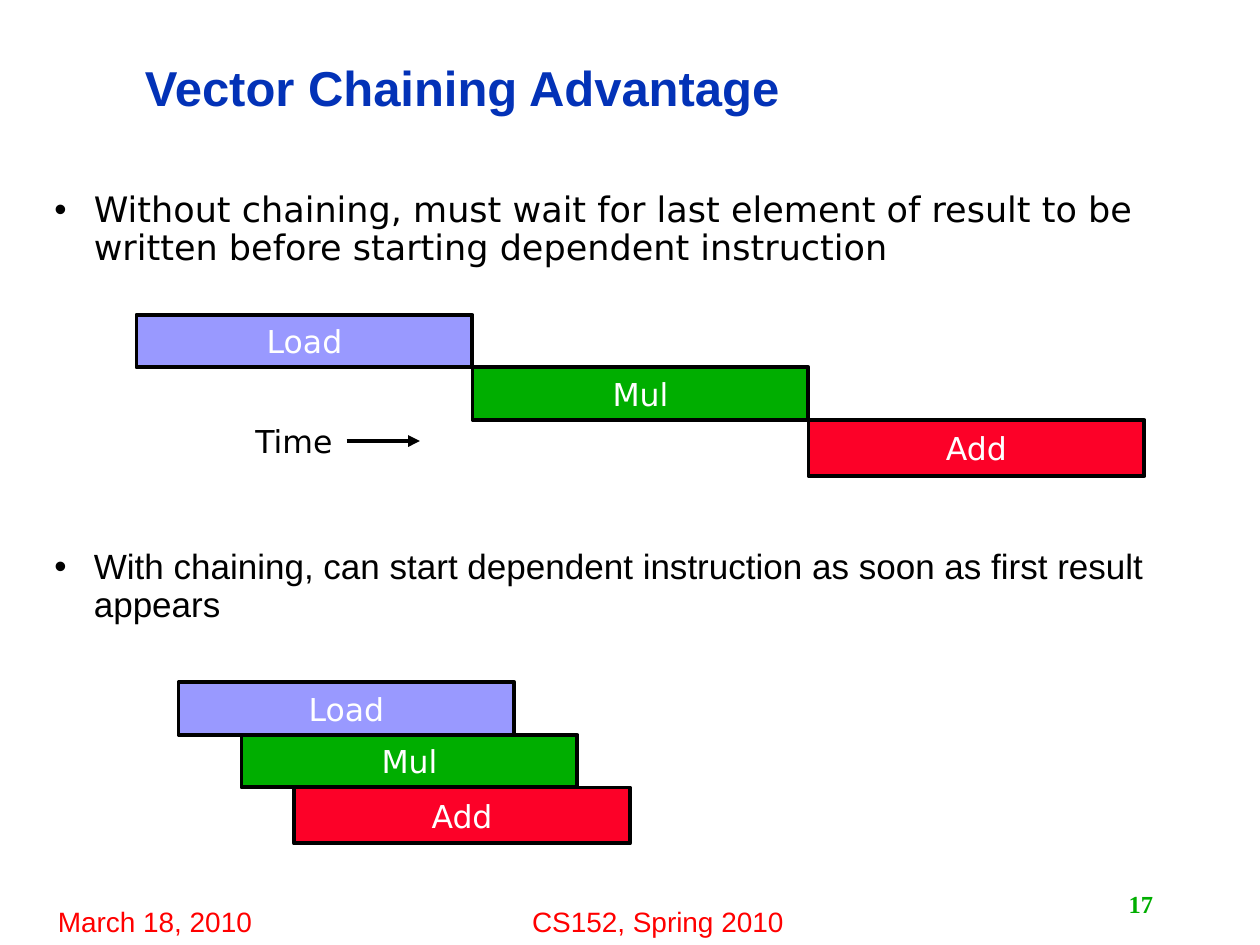
from dataclasses import dataclass

import lxml.etree
import pptx
import pptx.dml.color
import pptx.enum.shapes
import pptx.enum.text
import pptx.oxml.ns
import pptx.util

Pt = pptx.util.Pt
qn = pptx.oxml.ns.qn
ALIGN = pptx.enum.text.PP_ALIGN
MIDDLE = pptx.enum.text.MSO_ANCHOR.MIDDLE


@dataclass(frozen=True)
class Theme:
    title: str = "0332B7"
    ink: str = "000000"
    light: str = "FFFFFF"
    load: str = "9999FF"
    mul: str = "00AE00"
    add: str = "FC0128"
    footer: str = "FF0000"
    number: str = "00AE00"
    sans: str = "Arial"
    diagram: str = "DejaVu Sans"
    serif: str = "Times New Roman"
    title_size: int = 28
    bullet_size: int = 20
    label_size: int = 18
    footer_size: int = 16
    number_size: int = 14
    outline: float = 2.25


THEME = Theme()
STAGES = (("Load", THEME.load, 30), ("Mul", THEME.mul, 30), ("Add", THEME.add, 32))
STAGE_WIDTH = 192
STAGE_STEP = 30


def color(value):
    return pptx.dml.color.RGBColor.from_string(value)


def write(shape, text, face, size, ink, align=ALIGN.CENTER, bold=False, wrap=True, anchor=MIDDLE):
    """Fill the shape with one formatted paragraph and return that paragraph."""
    frame = shape.text_frame
    frame.word_wrap = wrap
    frame.vertical_anchor = anchor
    paragraph = frame.paragraphs[0]
    paragraph.text = text
    paragraph.alignment = align
    font = paragraph.font
    font.name, font.size, font.bold = face, Pt(size), bold
    font.color.rgb = color(ink)
    return paragraph


def text_box(shapes, box, text, *style, **options):
    label = shapes.add_textbox(*map(Pt, box))
    write(label, text, *style, **options)
    return label


def place_title(slide, box, text):
    title = slide.shapes.title
    title.left, title.top, title.width, title.height = map(Pt, box)
    heading = write(title, text, THEME.sans, THEME.title_size, THEME.title,
                    align=ALIGN.LEFT, bold=True)
    heading.line_spacing = 0.9


def bullet_text(shapes, box, text, face):
    statement = shapes.add_textbox(*map(Pt, box))
    paragraph = statement.text_frame.paragraphs[0]
    properties = paragraph._p.get_or_add_pPr()
    properties.set("marL", str(Pt(22.5)))
    properties.set("indent", str(Pt(-22.5)))
    lxml.etree.SubElement(properties, qn("a:buFont")).set("typeface", THEME.sans)
    lxml.etree.SubElement(properties, qn("a:buChar")).set("char", "•")
    write(statement, text, face, THEME.bullet_size, THEME.ink, align=ALIGN.LEFT)
    paragraph.line_spacing = 0.9


def stage_bars(shapes, top, lefts):
    for row, (left, (name, fill, height)) in enumerate(zip(lefts, STAGES)):
        bar = shapes.add_shape(
            pptx.enum.shapes.MSO_SHAPE.RECTANGLE,
            Pt(left), Pt(top + row * STAGE_STEP), Pt(STAGE_WIDTH), Pt(height))
        bar.shadow.inherit = False
        bar.fill.solid()
        bar.fill.fore_color.rgb = color(fill)
        bar.line.color.rgb = color(THEME.ink)
        bar.line.width = Pt(THEME.outline)
        write(bar, name, THEME.diagram, THEME.label_size, THEME.light)


def time_arrow(shapes, box, length):
    left, top, width, height = box
    time = text_box(shapes, box, "Time", THEME.diagram, THEME.label_size, THEME.ink, wrap=False)
    start, middle = left + width, top + height / 2
    arrow = shapes.add_connector(pptx.enum.shapes.MSO_CONNECTOR.STRAIGHT,
                                 Pt(start), Pt(middle), Pt(start + length), Pt(middle))
    arrow.begin_connect(time, 3)
    arrow.line.color.rgb = color(THEME.ink)
    arrow.line.width = Pt(THEME.outline)
    lxml.etree.SubElement(arrow.line._get_or_add_ln(), qn("a:tailEnd")).set("type", "triangle")
    lxml.etree.SubElement(arrow._element.spPr, qn("a:effectLst"))


def comparison(slide, box, text, face, lefts):
    """Place a statement at the top of the box and its timeline below it."""
    left, top, width, bars_drop = box
    shapes = slide.shapes.add_group_shape().shapes
    bullet_text(shapes, (left, top, width, 50.4), text, face)
    stage_bars(shapes, top + bars_drop, lefts)
    return shapes


def footer(slide, top):
    style = (THEME.sans, THEME.footer_size, THEME.footer)
    for left, width, text in ((25.2, 126.7, "March 18, 2010"),
                              (286.6, 178.6, "CS152, Spring 2010")):
        text_box(slide.shapes, (left, top, width, 26.6), text, *style,
                 wrap=False, anchor=pptx.enum.text.MSO_ANCHOR.TOP)
    text_box(slide.shapes, (516.2, top - 8.7, 149.8, 23), "17",
             THEME.serif, THEME.number_size, THEME.number,
             align=ALIGN.RIGHT, bold=True, wrap=False)


def main():
    deck = pptx.Presentation()
    deck.slide_width, deck.slide_height = Pt(720), Pt(540)
    slide = deck.slides.add_slide(deck.slide_layouts[5])

    place_title(slide, (75.6, 23.8, 561.6, 55.4), "Vector Chaining Advantage")
    unchained = comparison(
        slide, (24, 106.5, 672, 73.5),
        "Without chaining, must wait for last element of result to be written "
        "before starting dependent instruction",
        THEME.diagram, [78 + stage * STAGE_WIDTH for stage in range(3)])
    time_arrow(unchained, (138, 237.6, 60, 28.8), 42)
    comparison(
        slide, (24, 310.5, 672, 79.5),
        "With chaining, can start dependent instruction as soon as first result appears",
        THEME.sans, (102, 138, 168))
    footer(slide, 513.4)

    deck.save("out.pptx")


if __name__ == "__main__":
    main()
